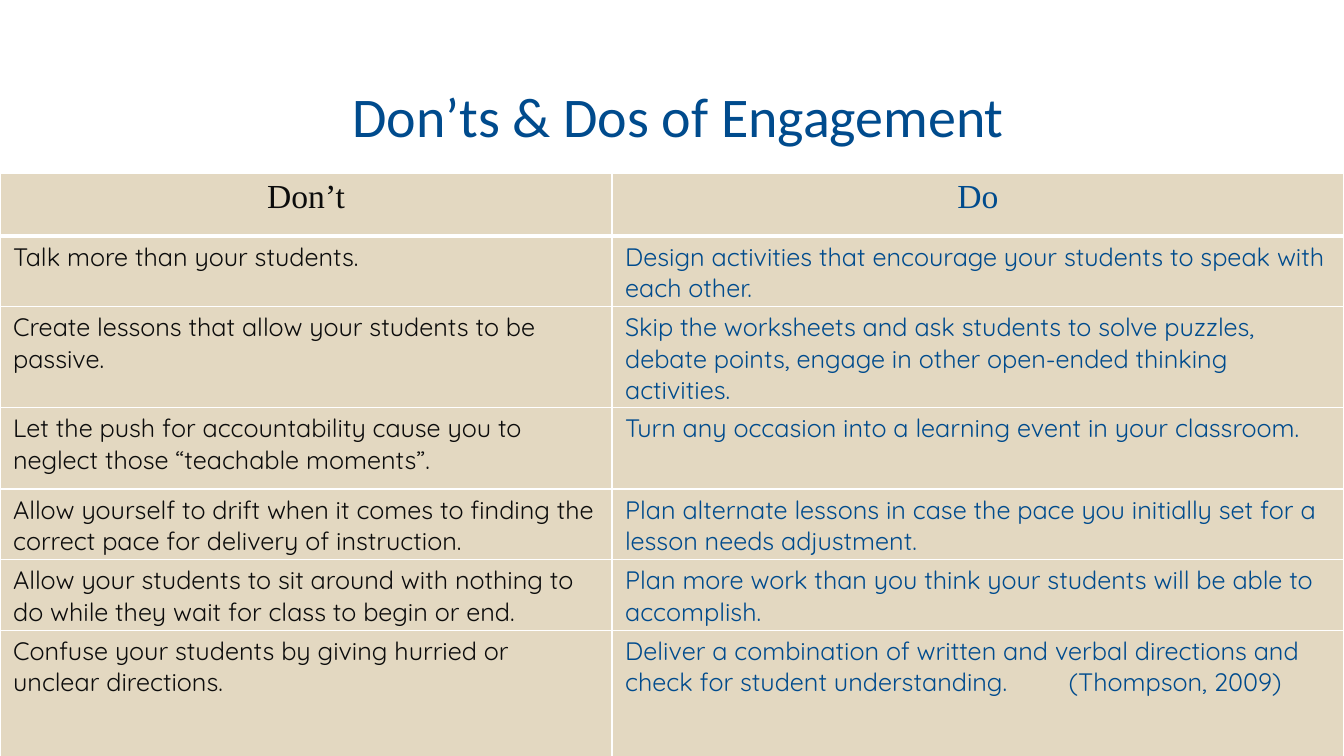
from lxml import etree
from pptx import Presentation
from pptx.dml.color import RGBColor
from pptx.enum import text
from pptx.oxml import ns
from pptx.util import Inches, Pt

BLUE = RGBColor(0x00, 0x4B, 0x8D)
BLACK = RGBColor(0x0C, 0x0C, 0x0C)
TAN = RGBColor(0xE3, 0xD8, 0xC1)
WHITE = RGBColor(0xFF, 0xFF, 0xFF)

CENTER = text.PP_ALIGN.CENTER
LEFT = text.PP_ALIGN.LEFT
TITLE = {"name": "Calibri", "size": Pt(40)}
HEADER = {"name": "Times New Roman", "size": Pt(24), "bold": False}
BODY = {"name": "Quicksand", "size": Pt(18), "bold": False}

COLUMN_WIDTHS = [6.07, 7.26]
COLUMN_COLORS = [BLACK, BLUE]
ROW_HEIGHTS = [0.62, 0.7, 0.7, 0.81, 0.7, 0.7, 1.48]
ADVICE = [
    ("Don’t", "Do"),
    ("Talk more than your students.",
     "Design activities that encourage your students to speak with each other."),
    ("Create lessons that allow your students to be passive.",
     "Skip the worksheets and ask students to solve puzzles, debate points, "
     "engage in other open-ended thinking activities."),
    ("Let the push for accountability cause you to neglect those “teachable moments”.",
     "Turn any occasion into a learning event in your classroom."),
    ("Allow yourself to drift when it comes to finding the correct pace for "
     "delivery of instruction.",
     "Plan alternate lessons in case the pace you initially set for a lesson "
     "needs adjustment."),
    ("Allow your students to sit around with nothing to do while they wait for "
     "class to begin or end.",
     "Plan more work than you think your students will be able to accomplish."),
    ("Confuse your students by giving hurried or unclear directions.",
     "Deliver a combination of written and verbal directions and check for "
     "student understanding.\t(Thompson, 2009)"),
]


def set_all(obj, values):
    for name, value in values.items():
        setattr(obj, name, value)


def write(p, content, fmt, color, align):
    if "\t" in content:
        tabs = etree.SubElement(p._p.get_or_add_pPr(), ns.qn("a:tabLst"))
        etree.SubElement(tabs, ns.qn("a:tab"), pos=str(Inches(4.4)), algn="l")
    p.alignment = align
    r = p.add_run()
    r.text = content
    set_all(r.font, fmt)
    r.font.color.rgb = color


def add_title(s, content):
    sp = s.shapes.add_textbox(Inches(0.28), Inches(0.56), Inches(12.89), Inches(1.17))
    tf = sp.text_frame
    set_all(tf, {
        "word_wrap": True, "vertical_anchor": text.MSO_ANCHOR.MIDDLE,
        "margin_left": Inches(0.13), "margin_right": Inches(0.13),
        "margin_top": Inches(0.07), "margin_bottom": Inches(0.07),
    })
    write(tf.paragraphs[0], content, TITLE, BLUE, CENTER)


def set_borders(cell, widths):
    tcPr = cell._tc.get_or_add_tcPr()
    for i, (side, width) in enumerate(widths.items()):
        ln = etree.Element(ns.qn(f"a:ln{side}"), w=str(Pt(width)))
        fill = etree.SubElement(ln, ns.qn("a:solidFill"))
        etree.SubElement(fill, ns.qn("a:srgbClr"), val=str(WHITE))
        tcPr.insert(i, ln)


def fill_cell(cell, content, row, color):
    set_all(cell, {
        "margin_left": Inches(0.13), "margin_right": Inches(0.13),
        "margin_top": Inches(0.05), "margin_bottom": Inches(0.05),
    })
    cell.fill.solid()
    cell.fill.fore_color.rgb = TAN
    set_borders(cell, {"L": 1, "R": 1, "T": 3 if row == 1 else 1, "B": 3 if row == 0 else 1})
    fmt, align = (HEADER, CENTER) if row == 0 else (BODY, LEFT)
    write(cell.text_frame.paragraphs[0], content, fmt, color, align)


def add_advice_table(s):
    table = s.shapes.add_table(
        len(ADVICE), len(COLUMN_WIDTHS), Inches(0), Inches(1.72),
        Inches(sum(COLUMN_WIDTHS)), Inches(sum(ROW_HEIGHTS))).table
    table.horz_banding = False
    for column, width in zip(table.columns, COLUMN_WIDTHS):
        column.width = Inches(width)
    for i, (height, contents) in enumerate(zip(ROW_HEIGHTS, ADVICE)):
        table.rows[i].height = Inches(height)
        for j, content in enumerate(contents):
            fill_cell(table.cell(i, j), content, i, COLUMN_COLORS[j])


def main():
    prs = Presentation()
    set_all(prs, {"slide_width": Inches(13.33), "slide_height": Inches(7.5)})
    s = prs.slides.add_slide(prs.slide_layouts[6])
    add_title(s, "Don’ts & Dos of Engagement")
    add_advice_table(s)
    prs.save("out.pptx")


if __name__ == "__main__":
    main()
